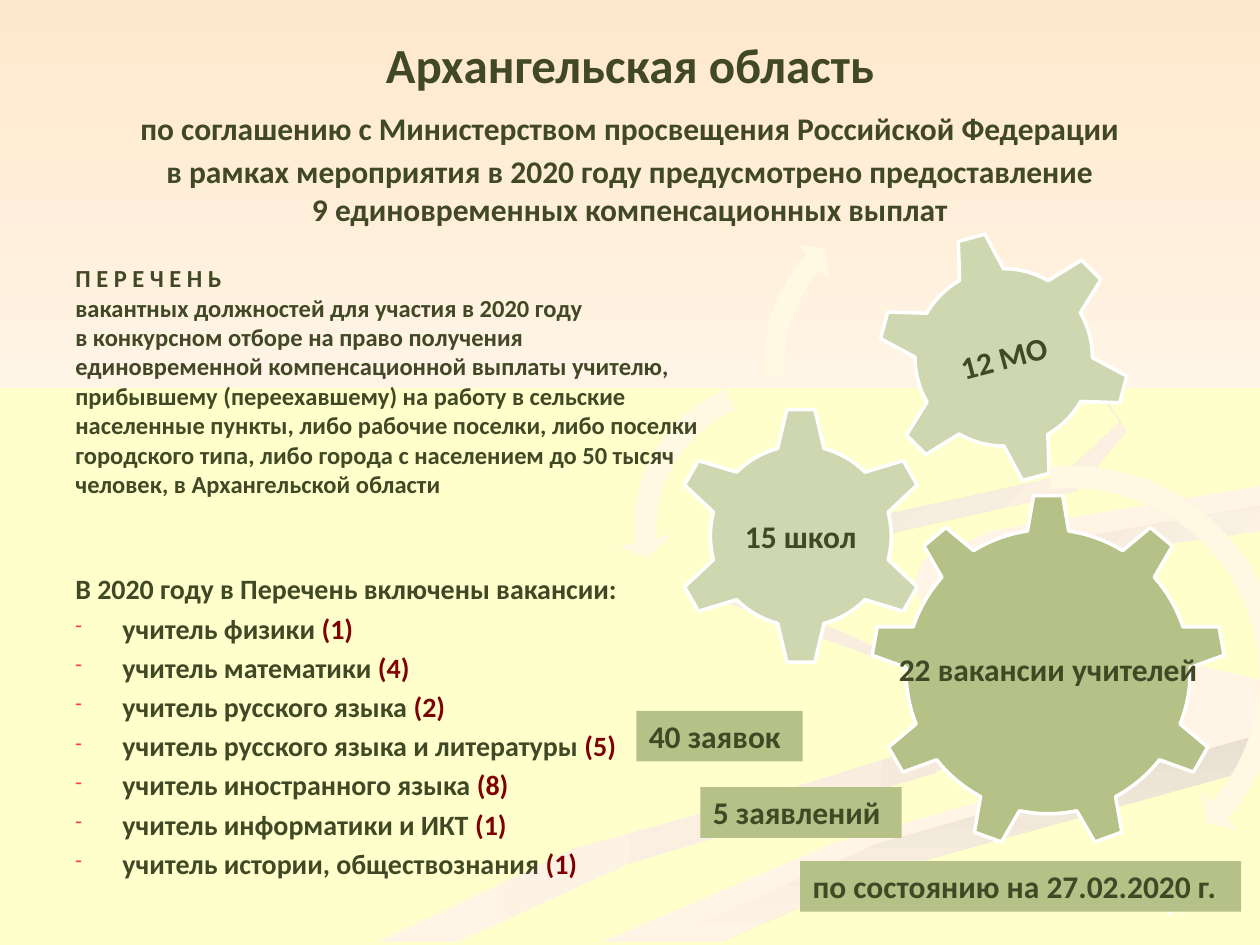
import pptx
import pptx.dml.color
import pptx.enum.shapes
import pptx.enum.text
import pptx.oxml.ns
import pptx.util
from lxml import etree

Cm = pptx.util.Cm
Pt = pptx.util.Pt
SHAPES = pptx.enum.shapes.MSO_SHAPE
ALIGN = pptx.enum.text.PP_ALIGN
ANCHOR = pptx.enum.text.MSO_ANCHOR
FONT = "Calibri"
COLORS = {
    "page": "FFFFCC", "text": "414825", "count": "7E0000", "bullet": "FF4040",
    "dark gear": "B5C186", "light gear": "CFD7B1", "arrow": "FFF8E2",
    "white": "FFFFFF", "ribbon": "FFF4E5", "peach": "FFE9CC",
    "shade 1": "F5EADC", "shade 2": "EAE0D2", "shade 3": "F1E7D8", "shade 4": "EDE3D5",
}

# Ribbon outlines in millimetres: points, gradient colours, angle
RIBBONS = [
    ([(198, 140), (146, 117), (145, 121), (197, 140), (198, 147), (156, 160), (116, 171),
      (76, 190), (92, 190), (127, 174), (188, 156), (203, 148)], ("ribbon", "shade 1"), 0),
    ([(240, 145), (186, 122), (184, 118), (198, 132), (229, 141), (227, 154), (239, 148)],
     ("ribbon", "shade 1"), 45),
    ([(128, 190), (145, 190), (177, 176), (253, 155), (253, 148), (177, 170), (145, 183)],
     ("shade 2", "ribbon"), 90),
    ([(184, 118), (193, 126), (236, 140), (239, 147), (221, 155), (168, 170), (121, 190),
      (132, 190), (177, 170), (254, 148), (254, 137), (215, 128), (198, 118), (209, 110),
      (254, 102), (254, 98), (200, 107), (186, 113)], ("ribbon", "ribbon"), 0),
    ([(198, 117), (201, 122), (210, 126), (205, 120), (218, 112), (254, 107), (254, 102),
      (208, 110)], ("shade 3", "ribbon"), 45),
    ([(173, 109), (217, 99), (227, 87), (219, 74), (194, 59), (215, 71), (226, 85),
      (214, 96), (159, 108), (147, 117), (158, 127), (151, 119), (158, 113)],
     ("shade 4", "ribbon"), 45),
]
# Shape, left, top, size, rotation, colour, label
GEARS = [
    (SHAPES.GEAR_9, 17.55, 9.96, 7.16, 0, "dark gear", "22 вакансии учителей"),
    (SHAPES.GEAR_6, 13.54, 8.2, 5.21, 0, "light gear", "15 школ"),
    (SHAPES.GEAR_6, 17.68, 4.65, 5.11, 345, "light gear", "12 МО"),
]
# Shape, left, top, size, adjustments
ARROWS = [
    (SHAPES.CIRCULAR_ARROW, 17.02, 9.07, 9.14, (0.05, 2.99, 25.27, 158.39, 0.06)),
    (SHAPES.LEFT_CIRCULAR_ARROW, 12.47, 7.32, 6.65, (0.07, 4.3, 104.89, 148.38, 0.08)),
    (SHAPES.CIRCULAR_ARROW, 15.11, 3.76, 7.16, (0.06, 3.94, 133.14, 105.08, 0.07)),
]
# Left, top, width, text
LABELS = [
    (12.83, 14.33, 3.35, "40 заявок"),
    (14.12, 15.87, 4.06, "5 заявлений"),
    (16.13, 17.36, 8.89, "по состоянию на 27.02.2020 г."),
]
VACANCIES = [
    ("физики", 1), ("математики", 4), ("русского языка", 2),
    ("русского языка и литературы", 5), ("иностранного языка", 8),
    ("информатики и ИКТ", 1), ("истории, обществознания", 1),
]


def color(name):
    return pptx.dml.color.RGBColor.from_string(COLORS[name])


def add_text(para, text, size=18, ink="text", bold=True):
    for number, line in enumerate(text.split("\n")):
        if number:
            para.add_line_break()
        span = para.add_run()
        span.text = line
        span.font.name, span.font.size, span.font.bold = FONT, Pt(size), bold
        span.font.color.rgb = color(ink)


def add_box(page, left, top, width, height, anchor=ANCHOR.TOP):
    box = page.shapes.add_textbox(Cm(left), Cm(top), Cm(width), Cm(height))
    box.text_frame.word_wrap = True
    box.text_frame.vertical_anchor = anchor
    return box.text_frame


def finish(shape, fill, line=None):
    shape.shadow.inherit = False
    if isinstance(fill, str):
        shape.fill.solid()
        shape.fill.fore_color.rgb = color(fill)
    else:
        shades, angle = fill
        shape.fill.gradient()
        shape.fill.gradient_angle = (360 - angle) % 360
        for stop, name in zip(shape.fill.gradient_stops, shades):
            stop.color.rgb = color(name)
    if line:
        shape.line.color.rgb = color(line)
        shape.line.width = Pt(2)
    else:
        shape.line.fill.background()


def add_shape(page, kind, left, top, width, height, fill, line=None):
    shape = page.shapes.add_shape(kind, Cm(left), Cm(top), Cm(width), Cm(height))
    finish(shape, fill, line)
    return shape


def add_ribbon(page, points, shades, angle):
    builder = page.shapes.build_freeform(*points[0], scale=Cm(0.1))
    builder.add_line_segments(points[1:], close=True)
    finish(builder.convert_to_shape(), (shades, angle))


def add_bullet(para):
    props = para._p.get_or_add_pPr()
    props.set("marL", str(Cm(0.95)))
    props.set("indent", str(-Cm(0.95)))
    tag = pptx.oxml.ns.qn
    paint = etree.SubElement(props, tag("a:buClr"))
    etree.SubElement(paint, tag("a:srgbClr"), val=COLORS["bullet"])
    etree.SubElement(props, tag("a:buSzPct"), val="70000")
    etree.SubElement(props, tag("a:buChar"), char="-")


def add_title(page):
    frame = add_box(page, 1.27, 0.74, 22.86, 3.81, ANCHOR.MIDDLE)
    add_text(frame.paragraphs[0], "Архангельская область", size=28)
    agreement, details = frame.add_paragraph(), frame.add_paragraph()
    add_text(agreement, "по соглашению с Министерством просвещения Российской Федерации")
    add_text(details, "в рамках мероприятия в 2020 году предусмотрено предоставление\n"
                      "9 единовременных компенсационных выплат")
    agreement.space_before, details.space_before = Pt(9), Pt(3)
    for para in frame.paragraphs:
        para.alignment = ALIGN.CENTER


def add_vacancies(page):
    frame = add_box(page, 1.27, 5.18, 13.23, 12.85)
    add_text(frame.paragraphs[0], "П Е Р Е Ч Е Н Ь", size=14)
    add_text(frame.add_paragraph(),
             "вакантных должностей для участия в 2020 году\n"
             "в конкурсном отборе на право получения единовременной компенсационной выплаты "
             "учителю, прибывшему (переехавшему) на работу в сельские населенные пункты, либо "
             "рабочие поселки, либо поселки городского типа, либо города с населением до "
             "50 тысяч человек, в Архангельской области", size=14)
    lead = frame.add_paragraph()
    lead.space_before = Pt(42)
    add_text(lead, "В 2020 году в Перечень включены вакансии:", size=16)
    for subject, count in VACANCIES:
        para = frame.add_paragraph()
        para.space_before = Pt(3.2)
        add_bullet(para)
        add_text(para, f"учитель {subject} ", size=16)
        add_text(para, f"({count})", size=16, ink="count")


def main():
    deck = pptx.Presentation()
    deck.slide_width, deck.slide_height = Cm(25.4), Cm(19.05)
    page = deck.slides.add_slide(deck.slide_layouts[6])

    # Background
    page.background.fill.solid()
    page.background.fill.fore_color.rgb = color("page")
    for points, shades, angle in RIBBONS:
        add_ribbon(page, points, shades, angle)
    add_shape(page, SHAPES.RECTANGLE, 0, 0, 25.4, 7.82, (("peach", "ribbon"), 90))

    # Title and page number
    add_title(page)
    number = add_box(page, 18.21, 17.35, 5.92, 1.32, ANCHOR.BOTTOM).paragraphs[0]
    number.alignment = ALIGN.RIGHT
    add_text(number, "14", size=12, ink="white", bold=False)

    # Gears with their arrows
    for kind, left, top, size, turn, fill, label in GEARS:
        gear = add_shape(page, kind, left, top, size, size, fill, line="white")
        gear.rotation = turn
        gear.text_frame.word_wrap = False
        gear.text_frame.vertical_anchor = ANCHOR.MIDDLE
        para = gear.text_frame.paragraphs[0]
        para.alignment = ALIGN.CENTER
        add_text(para, label)
    for kind, left, top, size, adjustments in ARROWS:
        arrow = add_shape(page, kind, left, top, size, size, "arrow")
        for place, value in enumerate(adjustments):
            arrow.adjustments[place] = value

    # List of vacancies and application counts
    add_vacancies(page)
    for left, top, width, text in LABELS:
        label = add_shape(page, SHAPES.RECTANGLE, left, top, width, 1.02, "dark gear")
        label.text_frame.word_wrap = False
        label.text_frame.vertical_anchor = ANCHOR.TOP
        label.text_frame.paragraphs[0].alignment = ALIGN.LEFT
        add_text(label.text_frame.paragraphs[0], text)

    deck.save("out.pptx")


if __name__ == "__main__":
    main()
